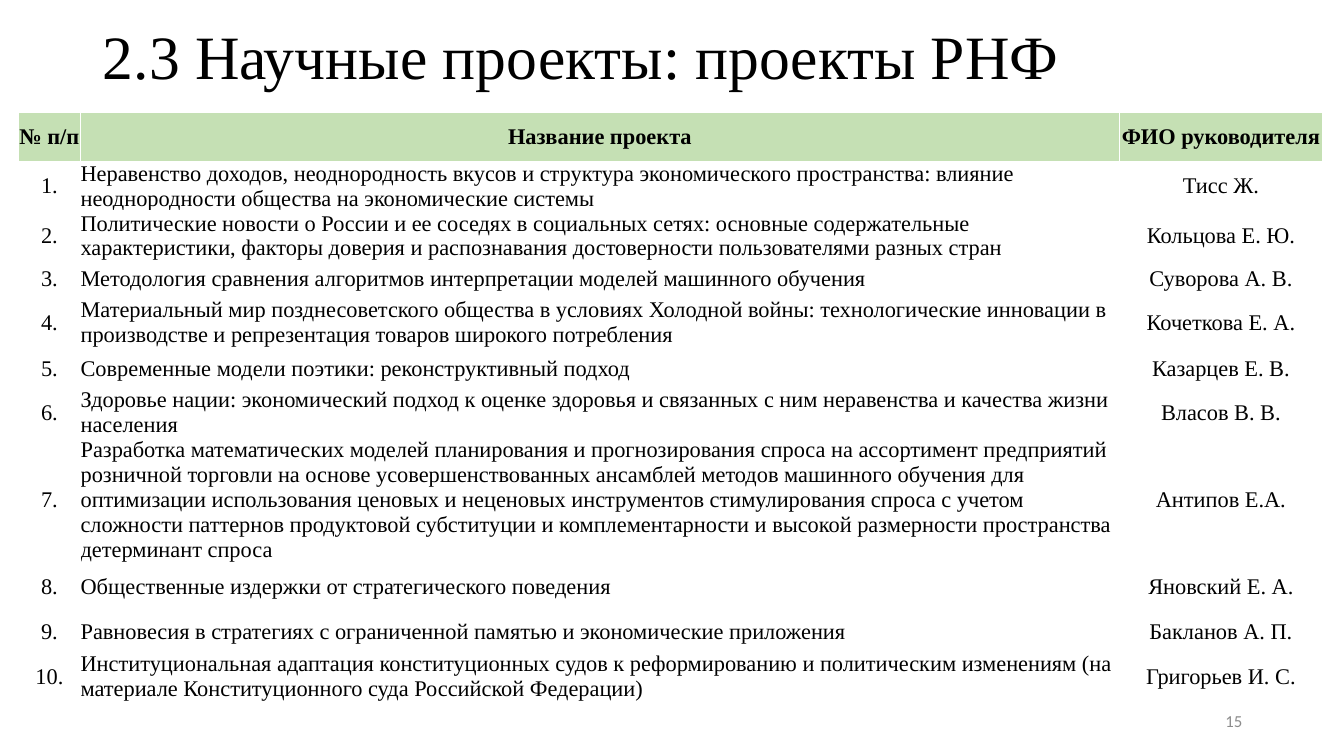
from dataclasses import dataclass

from lxml.etree import SubElement
from pptx import Presentation
from pptx.dml.color import RGBColor
from pptx.enum.text import MSO_ANCHOR, PP_ALIGN
from pptx.oxml.ns import qn
from pptx.slide import Slide
from pptx.table import _Cell
from pptx.text.text import _Paragraph
from pptx.util import Emu, Inches, Length, Pt

SLIDE_WIDTH = Inches(13.33)
SLIDE_HEIGHT = Inches(7.5)


@dataclass(frozen=True)
class Theme:
    serif: str = "Times New Roman"
    sans: str = "Calibri"
    ink: str = "000000"
    muted: str = "8C8C8C"
    paper: str = "FFFFFF"
    header: str = "C5E0B4"
    title_size: int = 44
    table_size: int = 16
    number_size: int = 12
    border_width: int = 1


@dataclass(frozen=True)
class Box:
    """Left, top, width and height in percent of the slide's size."""
    left: float
    top: float
    width: float
    height: float

    def lengths(self) -> tuple[Length, Length, Length, Length]:
        return across(self.left), down(self.top), across(self.width), down(self.height)


@dataclass(frozen=True)
class Project:
    """One table row; its height is in percent of the slide's height."""
    title: str
    leader: str
    height: float


THEME = Theme()
TITLE_BOX = Box(6.9, 2.8, 86.27, 19.33)
TABLE_BOX = Box(1.35, 14.93, 97, 82.4)
NUMBER_BOX = Box(70.67, 92.67, 22.5, 5.33)
COLUMN_SHARES = (4.65, 77.27, 15.15)
HEADER_HEIGHT = 6.4
HEADINGS = ("№ п/п", "Название проекта", "ФИО руководителя")
ALIGNMENTS = (PP_ALIGN.CENTER, PP_ALIGN.LEFT, PP_ALIGN.CENTER)

PROJECTS = (
    Project("Неравенство доходов, неоднородность вкусов и структура экономического пространства: "
            "влияние неоднородности общества на экономические системы", "Тисс Ж.", 6.4),
    Project("Политические новости о России и ее соседях в социальных сетях: основные "
            "содержательные характеристики, факторы доверия и распознавания достоверности "
            "пользователями разных стран", "Кольцова Е. Ю.", 6.13),
    Project("Методология сравнения алгоритмов интерпретации моделей машинного обучения",
            "Суворова А. В.", 4.67),
    Project("Материальный мир позднесоветского общества в условиях Холодной войны: "
            "технологические инновации в производстве и репрезентация товаров широкого "
            "потребления", "Кочеткова Е. А.", 7.07),
    Project("Современные модели поэтики: реконструктивный подход", "Казарцев Е. В.", 5.07),
    Project("Здоровье нации: экономический подход к оценке здоровья и связанных с ним "
            "неравенства и качества жизни населения", "Власов В. В.", 5.47),
    Project("Разработка математических моделей планирования и прогнозирования спроса на "
            "ассортимент предприятий розничной торговли на основе усовершенствованных ансамблей "
            "методов машинного обучения для оптимизации использования ценовых и неценовых "
            "инструментов стимулирования спроса с учетом сложности паттернов продуктовой "
            "субституции и комплементарности и высокой размерности пространства детерминант "
            "спроса", "Антипов Е.А.", 10.93),
    Project("Общественные издержки от стратегического поведения", "Яновский Е. А.", 6.53),
    Project("Равновесия в стратегиях с ограниченной памятью и экономические приложения",
            "Бакланов А. П.", 5.33),
    Project("Институциональная адаптация конституционных судов к реформированию и политическим "
            "изменениям (на материале Конституционного суда Российской Федерации)",
            "Григорьев И. С.", 5.87),
)


def across(percent: float) -> Length:
    return Emu(round(SLIDE_WIDTH * percent / 100))


def down(percent: float) -> Length:
    return Emu(round(SLIDE_HEIGHT * percent / 100))


def add_run(paragraph: _Paragraph, text: str, size: int, font_name: str = THEME.serif,
            color: str = THEME.ink, bold: bool = False) -> None:
    run = paragraph.add_run()
    run.text = text
    run.font.name = font_name
    run.font.size = Pt(size)
    run.font.bold = bold
    run.font.color.rgb = RGBColor.from_string(color)


def add_title(slide: Slide, text: str) -> None:
    title = slide.shapes.title
    title.left, title.top, title.width, title.height = TITLE_BOX.lengths()
    title.text_frame.vertical_anchor = MSO_ANCHOR.TOP
    paragraph = title.text_frame.paragraphs[0]
    paragraph.alignment = PP_ALIGN.LEFT
    paragraph.line_spacing = 0.9
    add_run(paragraph, text, THEME.title_size)


def set_borders(cell: _Cell) -> None:
    """Must run before the fill is set: the schema puts borders first."""
    properties = cell._tc.get_or_add_tcPr()
    for side in ("a:lnL", "a:lnR", "a:lnT", "a:lnB"):
        line = SubElement(properties, qn(side), w=str(Pt(THEME.border_width)))
        fill = SubElement(line, qn("a:solidFill"))
        SubElement(fill, qn("a:srgbClr"), val=THEME.paper)


def fill_cell(cell: _Cell, text: str, alignment: PP_ALIGN, is_header: bool) -> None:
    set_borders(cell)
    cell.fill.solid()
    cell.fill.fore_color.rgb = RGBColor.from_string(THEME.header if is_header else THEME.paper)
    cell.margin_left = cell.margin_right = cell.margin_top = cell.margin_bottom = 0
    cell.vertical_anchor = MSO_ANCHOR.MIDDLE
    paragraph = cell.text_frame.paragraphs[0]
    paragraph.alignment = alignment
    add_run(paragraph, text, THEME.table_size, bold=is_header)


def add_project_table(slide: Slide) -> None:
    rows = [HEADINGS] + [(f"{number}.", project.title, project.leader)
                         for number, project in enumerate(PROJECTS, start=1)]
    heights = [HEADER_HEIGHT] + [project.height for project in PROJECTS]
    frame = slide.shapes.add_table(len(rows), len(HEADINGS), *TABLE_BOX.lengths())
    table = frame.table
    table.horz_banding = False
    for column, share in zip(table.columns, COLUMN_SHARES):
        column.width = across(share)
    for row_index, (texts, height) in enumerate(zip(rows, heights)):
        table.rows[row_index].height = down(height)
        is_header = row_index == 0
        for column_index, text in enumerate(texts):
            alignment = PP_ALIGN.CENTER if is_header else ALIGNMENTS[column_index]
            fill_cell(table.cell(row_index, column_index), text, alignment, is_header)


def add_slide_number(slide: Slide, number: str) -> None:
    text_frame = slide.shapes.add_textbox(*NUMBER_BOX.lengths()).text_frame
    text_frame.word_wrap = True
    text_frame.vertical_anchor = MSO_ANCHOR.MIDDLE
    paragraph = text_frame.paragraphs[0]
    paragraph.alignment = PP_ALIGN.RIGHT
    add_run(paragraph, number, THEME.number_size, THEME.sans, THEME.muted)


def main() -> None:
    presentation = Presentation()
    presentation.slide_width = SLIDE_WIDTH
    presentation.slide_height = SLIDE_HEIGHT
    slide = presentation.slides.add_slide(presentation.slide_layouts.get_by_name("Title Only"))
    add_title(slide, "2.3 Научные проекты: проекты РНФ")
    add_project_table(slide)
    add_slide_number(slide, "15")
    presentation.save("out.pptx")


if __name__ == "__main__":
    main()
